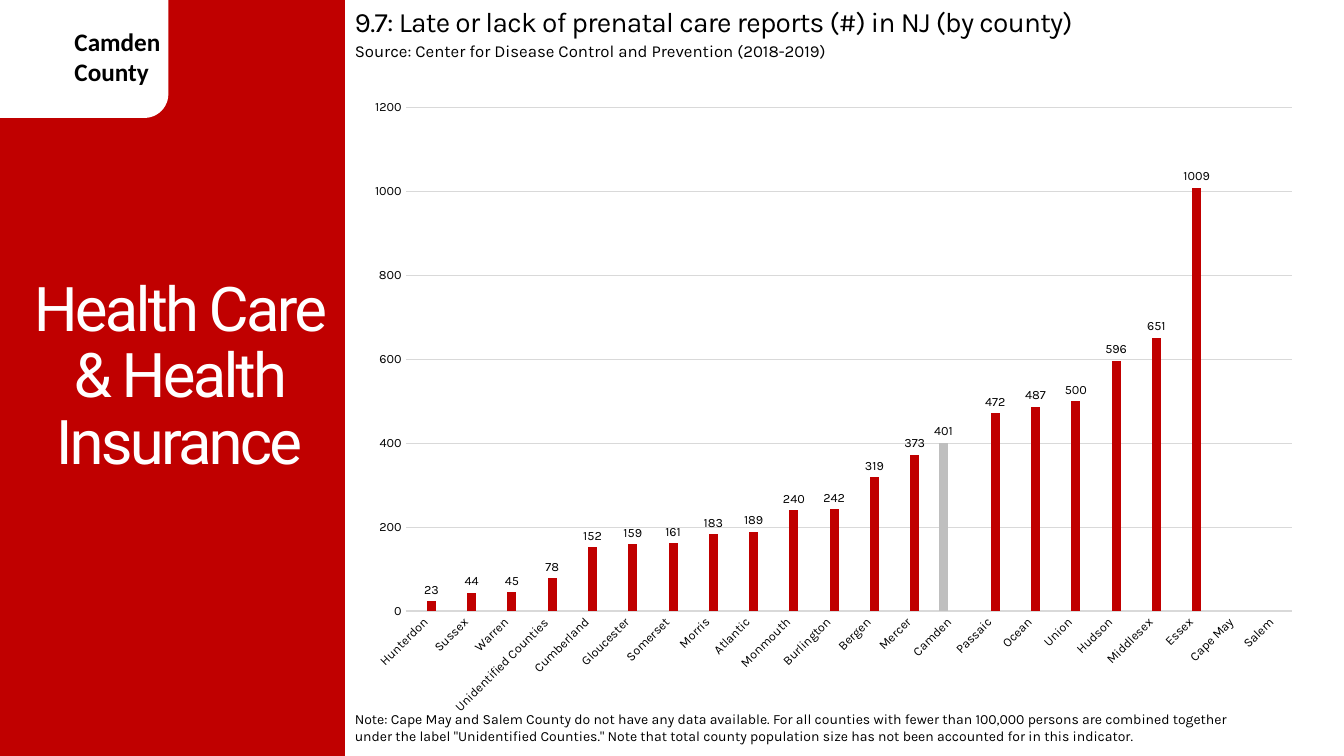
from dataclasses import dataclass

from lxml import etree
from pptx import Presentation
from pptx.chart.data import CategoryChartData
from pptx.dml.color import RGBColor
from pptx.enum.chart import XL_CHART_TYPE, XL_LABEL_POSITION, XL_TICK_MARK
from pptx.enum.shapes import MSO_SHAPE
from pptx.enum.text import MSO_ANCHOR, MSO_AUTO_SIZE, PP_ALIGN
from pptx.oxml.ns import qn
from pptx.util import Inches, Pt

COLUMNS = XL_CHART_TYPE.COLUMN_CLUSTERED
OUTSIDE_END = XL_LABEL_POSITION.OUTSIDE_END
NO_TICK = XL_TICK_MARK.NONE
RECTANGLE, ROUNDED = MSO_SHAPE.RECTANGLE, MSO_SHAPE.ROUNDED_RECTANGLE
MIDDLE, TOP = MSO_ANCHOR.MIDDLE, MSO_ANCHOR.TOP
CENTER, LEFT = PP_ALIGN.CENTER, PP_ALIGN.LEFT
FIXED = MSO_AUTO_SIZE.NONE
TITLE_ONLY = 5


@dataclass(frozen=True)
class Theme:
    """Hold the colours, fonts and type sizes of the slide."""
    red: str = "C00000"
    white: str = "FFFFFF"
    black: str = "000000"
    grid: str = "D9D9D9"
    highlight: str = "BFBFBF"
    label_font: str = "Calibri"
    title_font: str = "Roboto"
    body_font: str = "Karla"
    title: int = 44
    heading: int = 20
    label: int = 18
    source: int = 12
    note: int = 10
    chart: int = 9


THEME = Theme()
HIGHLIGHTED = "Camden"
REPORTS = {
    "Hunterdon": 23, "Sussex": 44, "Warren": 45, "Unidentified Counties": 78,
    "Cumberland": 152, "Gloucester": 159, "Somerset": 161, "Morris": 183,
    "Atlantic": 189, "Monmouth": 240, "Burlington": 242, "Bergen": 319,
    "Mercer": 373, "Camden": 401, "Passaic": 472, "Ocean": 487,
    "Union": 500, "Hudson": 596, "Middlesex": 651, "Essex": 1009,
    "Cape May": None, "Salem": None,
}
HEADING = "9.7: Late or lack of prenatal care reports (#) in NJ (by county)"
SOURCE = "Source: Center for Disease Control and Prevention (2018-2019)"
NOTE = (
    "Note: Cape May and Salem County do not have any data available. "
    "For all counties with fewer than 100,000 persons are combined together "
    'under the label "Unidentified Counties." Note that total county '
    "population size has not been accounted for in this indicator."
)


def apply(target, **values):
    """Set each named attribute on the target."""
    for name, value in values.items():
        setattr(target, name, value)


def style_font(font, size, name, color=THEME.black, bold=False):
    """Give a font its size, face, colour and weight."""
    apply(font, size=Pt(size), name=name, bold=bold)
    font.color.rgb = RGBColor.from_string(color)


def place(shape, box):
    """Move a shape to a box of left, top, width and height in inches."""
    apply(shape, **dict(zip(("left", "top", "width", "height"), map(Inches, box))))


def write(shape, lines, size, name, color=THEME.black, bold=False,
          spacing=0, anchor=TOP, align=LEFT, leading=1.0):
    """Fill a shape with one formatted paragraph for each line."""
    frame = shape.text_frame
    apply(frame, word_wrap=True, auto_size=FIXED, vertical_anchor=anchor)
    for number, line in enumerate(lines):
        para = frame.add_paragraph() if number else frame.paragraphs[0]
        apply(para, alignment=align, line_spacing=leading)
        span = para.add_run()
        span.text = line
        style_font(span.font, size, name, color, bold)
        if spacing:
            span.font._element.set("spc", str(int(spacing * 100)))


def add_text(page, box, lines, size, name, **options):
    """Add a text box with formatted lines."""
    shape = page.shapes.add_textbox(*map(Inches, box))
    write(shape, lines, size, name, **options)


def add_block(page, kind, box, color):
    """Add a plain filled shape without outline or shadow."""
    block = page.shapes.add_shape(kind, *map(Inches, box))
    block.shadow.inherit = False
    block.fill.solid()
    block.fill.fore_color.rgb = RGBColor.from_string(color)
    block.line.fill.background()


def add_side_panel(page, box):
    """Build the red panel with its county tab and the slide title."""
    left, top, width, height = box
    add_block(page, RECTANGLE, box, THEME.red)
    add_block(page, ROUNDED, (left - 0.33, top - 0.25, 2, 1.42), THEME.white)
    add_text(page, (left + 0.64, top + 0.21, 1.17, 0.71), ("Camden", "County"),
             THEME.label, THEME.label_font, bold=True)
    title = page.shapes.title
    page.shapes._spTree.append(title._element)
    place(title, (left, top + 0.75, width + 0.13, height - 1.5))
    write(title, ["Health Care & Health Insurance"], THEME.title, THEME.title_font,
          color=THEME.white, spacing=-2, anchor=MIDDLE, align=CENTER, leading=0.9)


def style_line(line):
    """Give a chart line the thin grid style."""
    line.width = Pt(0.75)
    line.color.rgb = RGBColor.from_string(THEME.grid)


def set_plot_area(chart, left, top, width, height):
    """Fix the inner plot area as fractions of the chart."""
    area = chart._chartSpace.find(".//" + qn("c:plotArea"))
    for old in area.findall(qn("c:layout")):
        area.remove(old)
    layout = etree.Element(qn("c:layout"))
    manual = etree.SubElement(layout, qn("c:manualLayout"))
    settings = {"layoutTarget": "inner", "xMode": "edge", "yMode": "edge",
                "x": left, "y": top, "w": width, "h": height}
    for name, value in settings.items():
        etree.SubElement(manual, qn("c:" + name)).set("val", str(value))
    area.insert(0, layout)


def add_county_chart(page, box):
    """Add the column chart of reports with one county highlighted."""
    data = CategoryChartData()
    data.categories = list(REPORTS)
    data.add_series("Series 1", [value if county == HIGHLIGHTED else None
                                 for county, value in REPORTS.items()])
    data.add_series("Series 2", [None if county == HIGHLIGHTED else value
                                 for county, value in REPORTS.items()])
    chart = page.shapes.add_chart(COLUMNS, *map(Inches, box), data).chart
    apply(chart, has_title=False, has_legend=False)
    style_font(chart.font, THEME.note, THEME.label_font)
    set_plot_area(chart, 0.05, 0.03, 0.93, 0.79)

    plot = chart.plots[0]
    apply(plot, gap_width=219, overlap=-27, vary_by_categories=False)
    for series, color in zip(plot.series, (THEME.highlight, THEME.red)):
        series.format.fill.solid()
        series.format.fill.fore_color.rgb = RGBColor.from_string(color)
        labels = series.data_labels
        apply(labels, show_value=True, position=OUTSIDE_END)
        style_font(labels.font, THEME.chart, THEME.body_font)

    counties, values = chart.category_axis, chart.value_axis
    for axis in (counties, values):
        apply(axis, major_tick_mark=NO_TICK, minor_tick_mark=NO_TICK)
        style_font(axis.tick_labels.font, THEME.chart, THEME.body_font)
    style_line(counties.format.line)
    counties._element.find(qn("c:txPr")).find(qn("a:bodyPr")).set("rot", "-2700000")
    apply(values, minimum_scale=0, maximum_scale=1200, major_unit=200,
          has_major_gridlines=True)
    values.format.line.fill.background()
    style_line(values.major_gridlines.format.line)


def add_report(page, box):
    """Build the heading, source, note and chart beside the panel."""
    left, top, width, height = box
    add_text(page, (left, top, width - 0.05, 0.44), [HEADING],
             THEME.heading, THEME.body_font, spacing=-0.5)
    add_text(page, (left, top + 0.36, 9.19, 0.3), [SOURCE],
             THEME.source, THEME.body_font)
    add_text(page, (left, top + height - 0.5, 9.19, 0.44), [NOTE],
             THEME.note, THEME.body_font)
    add_county_chart(page, (left + 0.13, top + 0.88, 9.45, 6.32))


def main():
    """Build and save the deck."""
    deck = Presentation()
    apply(deck, slide_width=Inches(13.33), slide_height=Inches(7.5))
    page = deck.slides.add_slide(deck.slide_layouts[TITLE_ONLY])
    add_side_panel(page, (0, 0, 3.42, 7.5))
    add_report(page, (3.42, 0, 9.91, 7.5))
    deck.save("out.pptx")


if __name__ == "__main__":
    main()
